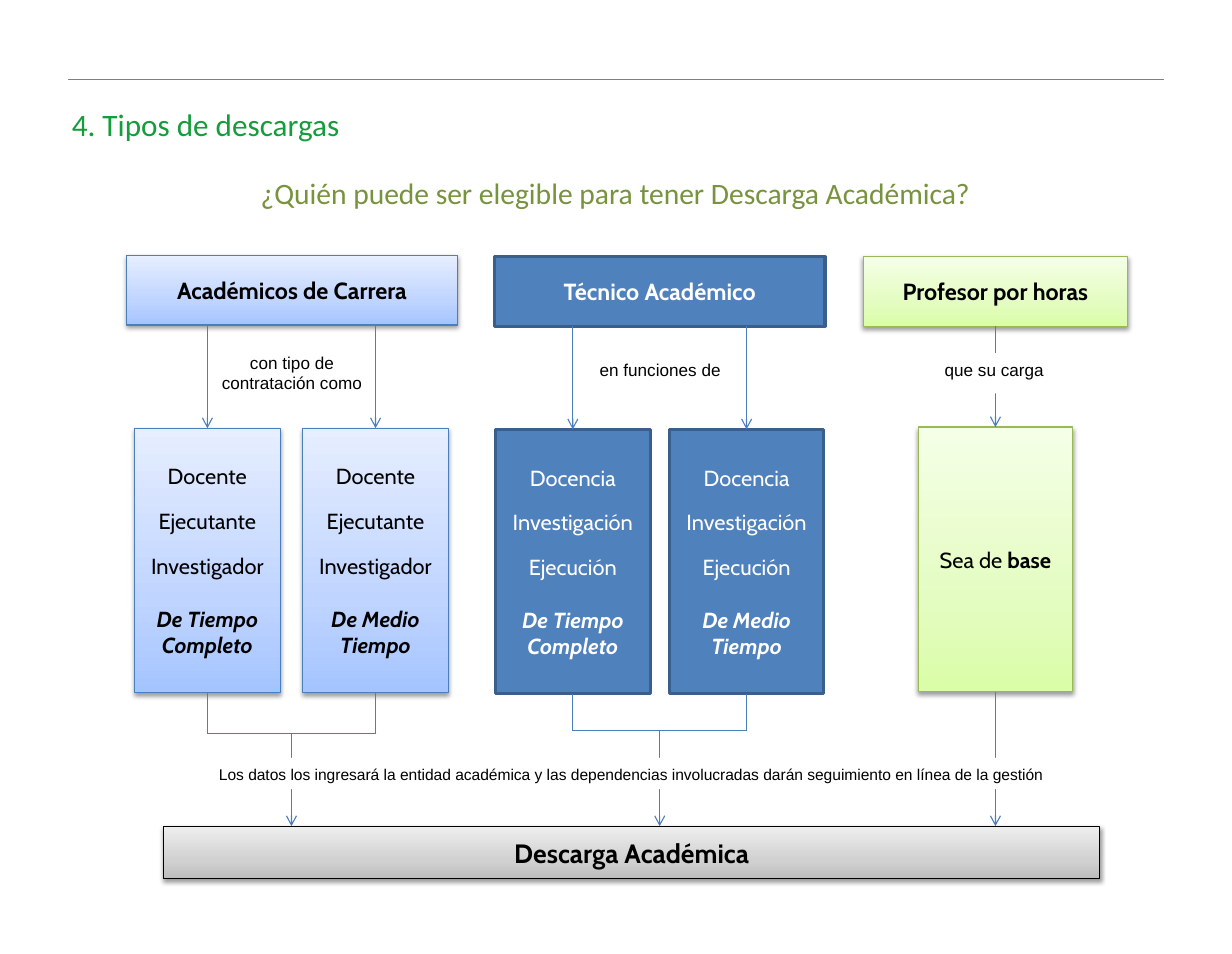
import copy
from dataclasses import dataclass
from typing import Optional

import lxml.etree
import pptx
import pptx.dml.color
import pptx.enum.shapes
import pptx.enum.text
import pptx.oxml.ns
import pptx.util

Inches = pptx.util.Inches
Pt = pptx.util.Pt
qn = pptx.oxml.ns.qn


@dataclass(frozen=True)
class Look:
    fills: tuple[str, ...]
    line: str
    line_width: float = 0.75
    text: str = "000000"


@dataclass(frozen=True)
class Theme:
    heading: str = "Calibri"
    box: str = "Cabin"
    caption: str = "Arial"
    title_color: str = "159C3B"
    question_color: str = "77933C"
    black: str = "000000"
    white: str = "FFFFFF"
    rule: str = "808080"
    arrow: str = "4B7EBC"
    title_size: int = 20
    question_size: int = 19
    result_size: int = 17
    header_size: int = 15
    card_size: int = 14
    caption_size: int = 11
    notice_size: int = 10
    blue: Look = Look(("A4C4FF", "BFD4FF", "E6EEFF"), "4B7EBC")
    solid: Look = Look(("4F81BD",), "3A5F8C", 2, "FFFFFF")
    green: Look = Look(("DAFDA7", "E4FCC2", "F5FFE7"), "98B955")
    gray: Look = Look(("BDBDBD", "D1D1D1", "EEEEEE"), "000000")


THEME = Theme()
GRADIENT_POSITIONS = (0, 0.35, 1)


@dataclass(frozen=True)
class Frame:
    left: float
    top: float
    width: float
    height: float

    @property
    def center(self) -> float:
        return self.left + self.width / 2

    @property
    def bottom(self) -> float:
        return self.top + self.height

    def lengths(self) -> list:
        return [Inches(value) for value in (self.left, self.top, self.width, self.height)]


@dataclass(frozen=True)
class Run:
    text: str
    bold: bool = False
    italic: bool = False


@dataclass(frozen=True)
class Line:
    runs: tuple[Run, ...]
    space_before: float = 0


@dataclass(frozen=True)
class Card:
    frame: Frame
    lines: tuple[Line, ...]


@dataclass(frozen=True)
class Category:
    look: Look
    header: Card
    cards: tuple[Card, ...]
    junction: float = 0


@dataclass(frozen=True)
class Caption:
    frame: Frame
    text: str
    size: int = THEME.caption_size
    font: str = THEME.caption
    color: str = THEME.black
    masked: bool = False


def bold(text: str) -> tuple[Line, ...]:
    return (Line((Run(text, bold=True),)),)


def duties(names: tuple[str, ...], schedule: str) -> tuple[Line, ...]:
    listed = tuple(Line((Run(name),), 12 if index else 0) for index, name in enumerate(names))
    return listed + (Line((Run(schedule, bold=True, italic=True),), 17),)


TEACHER = ("Docente", "Ejecutante", "Investigador")
TECHNICIAN = ("Docencia", "Investigación", "Ejecución")
FULL_TIME = "De Tiempo Completo"
HALF_TIME = "De Medio Tiempo"

CATEGORIES = (
    Category(THEME.blue, Card(Frame(1.13, 2.28, 2.95, 0.62), bold("Académicos de Carrera")), (
        Card(Frame(1.2, 3.82, 1.3, 2.36), duties(TEACHER, FULL_TIME)),
        Card(Frame(2.7, 3.82, 1.3, 2.36), duties(TEACHER, HALF_TIME))), 6.54),
    Category(THEME.solid, Card(Frame(4.41, 2.29, 2.95, 0.62), bold("Técnico Académico")), (
        Card(Frame(4.42, 3.83, 1.38, 2.36), duties(TECHNICIAN, FULL_TIME)),
        Card(Frame(5.97, 3.83, 1.38, 2.36), duties(TECHNICIAN, HALF_TIME))), 6.52),
    Category(THEME.green, Card(Frame(7.7, 2.29, 2.36, 0.62), bold("Profesor por horas")), (
        Card(Frame(8.19, 3.81, 1.38, 2.36), (Line((Run("Sea de "), Run("base", bold=True))),)),)),
)
RESULT = Card(Frame(1.46, 7.37, 8.35, 0.47), bold("Descarga Académica"))
CAPTIONS = (
    Caption(Frame(0.61, 1.5, 9.76, 0.43), "¿Quién puede ser elegible para tener Descarga Académica?",
            THEME.question_size, THEME.heading, THEME.question_color),
    Caption(Frame(1.75, 3.08, 1.71, 0.48), "con tipo de contratación como"),
    Caption(Frame(5.09, 3.15, 1.6, 0.3), "en funciones de"),
    Caption(Frame(7.69, 3.15, 2.36, 0.36), "que su carga", masked=True),
    Caption(Frame(1.45, 6.76, 8.35, 0.28),
            "Los datos los ingresará la entidad académica y las dependencias involucradas "
            "darán seguimiento en línea de la gestión", THEME.notice_size, masked=True),
)


def rgb(value: str) -> pptx.dml.color.RGBColor:
    return pptx.dml.color.RGBColor.from_string(value)


def style_font(font, name: str, size: float, color: str) -> None:
    font.name, font.size = name, Pt(size)
    font.color.rgb = rgb(color)


def set_margins(text_frame) -> None:
    text_frame.word_wrap = True
    text_frame.margin_left = text_frame.margin_right = Inches(0.11)
    text_frame.margin_top = text_frame.margin_bottom = Inches(0.06)


def paint(shape, look: Look) -> None:
    shape.shadow.inherit = False
    shape.line.color.rgb = rgb(look.line)
    shape.line.width = Pt(look.line_width)
    if len(look.fills) == 1:
        shape.fill.solid()
        shape.fill.fore_color.rgb = rgb(look.fills[0])
        return
    shape.fill.gradient()
    shape.fill.gradient_angle = 90
    properties = shape._element.spPr
    first_stop = properties.find(".//" + qn("a:gs"))
    first_stop.addnext(copy.deepcopy(first_stop))
    for stop, color, position in zip(shape.fill.gradient_stops, look.fills, GRADIENT_POSITIONS):
        stop.color.rgb = rgb(color)
        stop.position = position
    shadow = lxml.etree.SubElement(
        properties.find(qn("a:effectLst")), qn("a:outerShdw"), blurRad=str(Pt(3.1)),
        dist=str(Pt(1.6)), dir="5400000", rotWithShape="0")
    shade = lxml.etree.SubElement(shadow, qn("a:srgbClr"), val=THEME.black)
    lxml.etree.SubElement(shade, qn("a:alpha"), val="38000")


def draw_card(slide, card: Card, look: Look, size: int):
    shape = slide.shapes.add_shape(pptx.enum.shapes.MSO_SHAPE.RECTANGLE, *card.frame.lengths())
    paint(shape, look)
    set_margins(shape.text_frame)
    shape.text_frame.vertical_anchor = pptx.enum.text.MSO_ANCHOR.MIDDLE
    for index, line in enumerate(card.lines):
        paragraph = shape.text_frame.add_paragraph() if index else shape.text_frame.paragraphs[0]
        paragraph.alignment = pptx.enum.text.PP_ALIGN.CENTER
        paragraph.space_before = Pt(line.space_before)
        for piece in line.runs:
            run = paragraph.add_run()
            run.text = piece.text
            style_font(run.font, THEME.box, size, look.text)
            run.font.bold, run.font.italic = piece.bold, piece.italic
    return shape


def draw_line(slide, start: tuple[float, float], end: tuple[float, float], arrow: bool = False,
              source: Optional[object] = None, target: Optional[object] = None,
              color: str = THEME.arrow) -> None:
    connector = slide.shapes.add_connector(
        pptx.enum.shapes.MSO_CONNECTOR.STRAIGHT, *[Inches(value) for value in start + end])
    connector.line.color.rgb = rgb(color)
    connector.line.width = Pt(0.75)
    if arrow:
        lxml.etree.SubElement(connector.line._get_or_add_ln(), qn("a:tailEnd"), type="arrow")
    lxml.etree.SubElement(connector._element.spPr, qn("a:effectLst"))
    if source is not None:
        connector.begin_connect(source, 2)
    if target is not None:
        connector.end_connect(target, 0)


def draw_category(slide, category: Category) -> None:
    header = draw_card(slide, category.header, category.look, THEME.header_size)
    single = len(category.cards) == 1
    centers = [card.frame.center for card in category.cards]
    for card, center in zip(category.cards, centers):
        shape = draw_card(slide, card, category.look, THEME.card_size)
        draw_line(slide, (center, category.header.frame.bottom), (center, card.frame.top), True,
                  header if single else None, shape)
        end = RESULT.frame.top if single else category.junction
        draw_line(slide, (center, card.frame.bottom), (center, end), single, shape)
    if not single:
        middle = sum(centers) / len(centers)
        draw_line(slide, (centers[0], category.junction), (centers[-1], category.junction))
        draw_line(slide, (middle, category.junction), (middle, RESULT.frame.top), True)


def draw_caption(slide, caption: Caption) -> None:
    shape = slide.shapes.add_textbox(*caption.frame.lengths())
    if caption.masked:
        shape.fill.solid()
        shape.fill.fore_color.rgb = rgb(THEME.white)
    set_margins(shape.text_frame)
    shape.text_frame.text = caption.text
    paragraph = shape.text_frame.paragraphs[0]
    paragraph.alignment = pptx.enum.text.PP_ALIGN.CENTER
    style_font(paragraph.runs[0].font, caption.font, caption.size, caption.color)


def draw_title(slide) -> None:
    title = slide.shapes.title
    title.left, title.top, title.width, title.height = Frame(0.54, 0.89, 9.61, 0.55).lengths()
    title.text_frame.text = "4. Tipos de descargas"
    title.text_frame.auto_size = pptx.enum.text.MSO_AUTO_SIZE.NONE
    title.text_frame.vertical_anchor = pptx.enum.text.MSO_ANCHOR.TOP
    paragraph = title.text_frame.paragraphs[0]
    paragraph.alignment = pptx.enum.text.PP_ALIGN.LEFT
    style_font(paragraph.runs[0].font, THEME.heading, THEME.title_size, THEME.title_color)


def main() -> None:
    presentation = pptx.Presentation()
    presentation.slide_width, presentation.slide_height = Inches(10.99), Inches(8.51)
    slide = presentation.slides.add_slide(presentation.slide_layouts.get_by_name("Title Only"))
    draw_title(slide)
    draw_line(slide, (0.61, 0.71), (10.38, 0.71), color=THEME.rule)
    draw_card(slide, RESULT, THEME.gray, THEME.result_size)
    for category in CATEGORIES:
        draw_category(slide, category)
    for caption in CAPTIONS:
        draw_caption(slide, caption)
    presentation.save("out.pptx")


if __name__ == "__main__":
    main()
